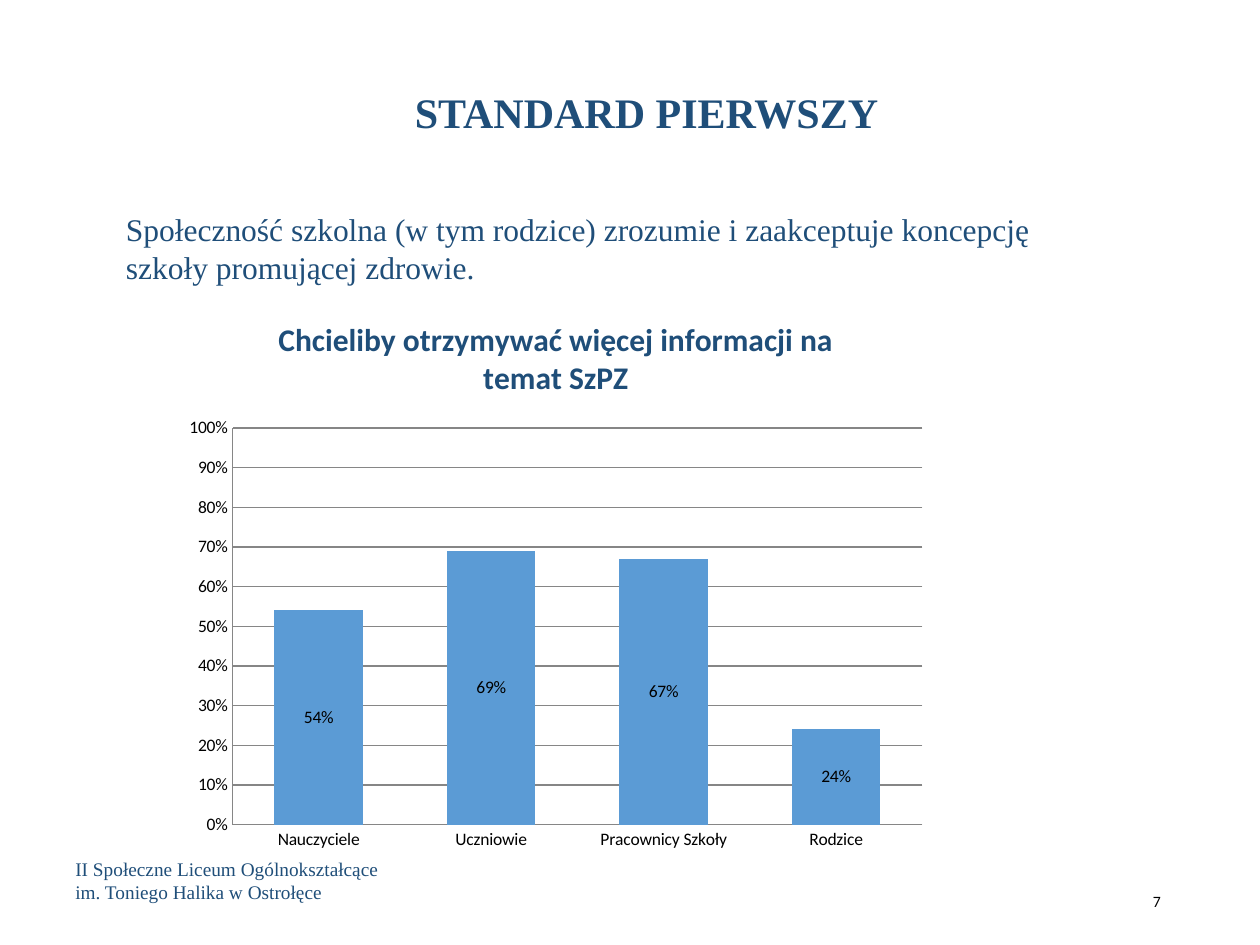
from pptx import Presentation
from pptx.chart.data import CategoryChartData
from pptx.dml.color import RGBColor as RGB
from pptx.enum.chart import XL_CHART_TYPE as CT, XL_LABEL_POSITION as LP, XL_TICK_MARK as TM
from pptx.enum.text import MSO_ANCHOR as MA, PP_ALIGN as PA
from pptx.util import Cm, Pt

COLORS = {"navy": "1F4E79", "bar": "5B9BD5", "grid": "868686", "black": "000000"}
SERIF, SANS = "Times New Roman", "Calibri"

TEXTS = [
    ("STANDARD PIERWSZY", (4.83, 1.32, 16.41, 2.01),
     dict(size=24, bold=True, align=PA.CENTER, spacing=0.9)),
    ("Społeczność szkolna (w tym rodzice) zrozumie i zaakceptuje koncepcję "
     "szkoły promującej zdrowie.", (2.29, 4.11, 18.8, 1.8),
     dict(size=18, anchor=MA.TOP)),
    ("II Społeczne Liceum Ogólnokształcące im. Toniego Halika w Ostrołęce",
     (1.27, 17.35, 7.11, 0.79), dict(size=11)),
    ("7", (17.93, 17.65, 5.72, 1.02),
     dict(size=9, font=SANS, color="black", align=PA.RIGHT)),
]
CHART_TITLE = "Chcieliby otrzymywać więcej informacji na temat SzPZ"
CHART_BOX = (3.51, 5.92, 15.39, 11.43)
SHARES = {"Nauczyciele": 0.54, "Uczniowie": 0.69, "Pracownicy Szkoły": 0.67, "Rodzice": 0.24}


def style(font, size, name, color, bold=False):
    font.size, font.name, font.bold = Pt(size), name, bold
    font.color.rgb = RGB.from_string(COLORS[color])


def add_text(s, text, box, size, font=SERIF, color="navy", bold=False,
             align=PA.LEFT, anchor=MA.MIDDLE, spacing=1.0):
    tf = s.shapes.add_textbox(*map(Cm, box)).text_frame
    tf.word_wrap, tf.vertical_anchor = True, anchor
    p = tf.paragraphs[0]
    p.alignment, p.line_spacing = align, spacing
    r = p.add_run()
    r.text = text
    style(r.font, size, font, color, bold)


def add_share_chart(s):
    data = CategoryChartData(number_format="0%")
    data.categories = list(SHARES)
    data.add_series("Series 1", list(SHARES.values()))
    chart = s.shapes.add_chart(CT.COLUMN_STACKED, *map(Cm, CHART_BOX), data).chart
    style(chart.font, 10, SANS, "black")
    chart.has_legend = False

    chart.has_title = True
    chart.chart_title.include_in_layout = False
    r = chart.chart_title.text_frame.paragraphs[0].add_run()
    r.text = CHART_TITLE
    style(r.font, 18, SANS, "navy", bold=True)

    values = chart.value_axis
    values.minimum_scale, values.maximum_scale, values.major_unit = 0, 1, 0.1
    values.has_major_gridlines = True
    values.tick_labels.number_format = "0%"
    values.tick_labels.number_format_is_linked = False
    for axis in (values, chart.category_axis):
        axis.major_tick_mark = axis.minor_tick_mark = TM.NONE
    for line in (values.format.line, chart.category_axis.format.line,
                 values.major_gridlines.format.line):
        line.width = Pt(0.75)
        line.color.rgb = RGB.from_string(COLORS["grid"])

    plot = chart.plots[0]
    plot.gap_width, plot.overlap, plot.vary_by_categories = 95, 100, False
    fill = plot.series[0].format.fill
    fill.solid()
    fill.fore_color.rgb = RGB.from_string(COLORS["bar"])
    plot.has_data_labels = True
    labels = plot.data_labels
    labels.show_value, labels.position = True, LP.CENTER
    labels.number_format, labels.number_format_is_linked = "0%", False
    style(labels.font, 10, SANS, "black")


prs = Presentation()
prs.slide_width, prs.slide_height = Cm(25.4), Cm(19.05)
s = prs.slides.add_slide(prs.slide_layouts[6])
for text, box, fmt in TEXTS:
    add_text(s, text, box, **fmt)
add_share_chart(s)
prs.save("out.pptx")
